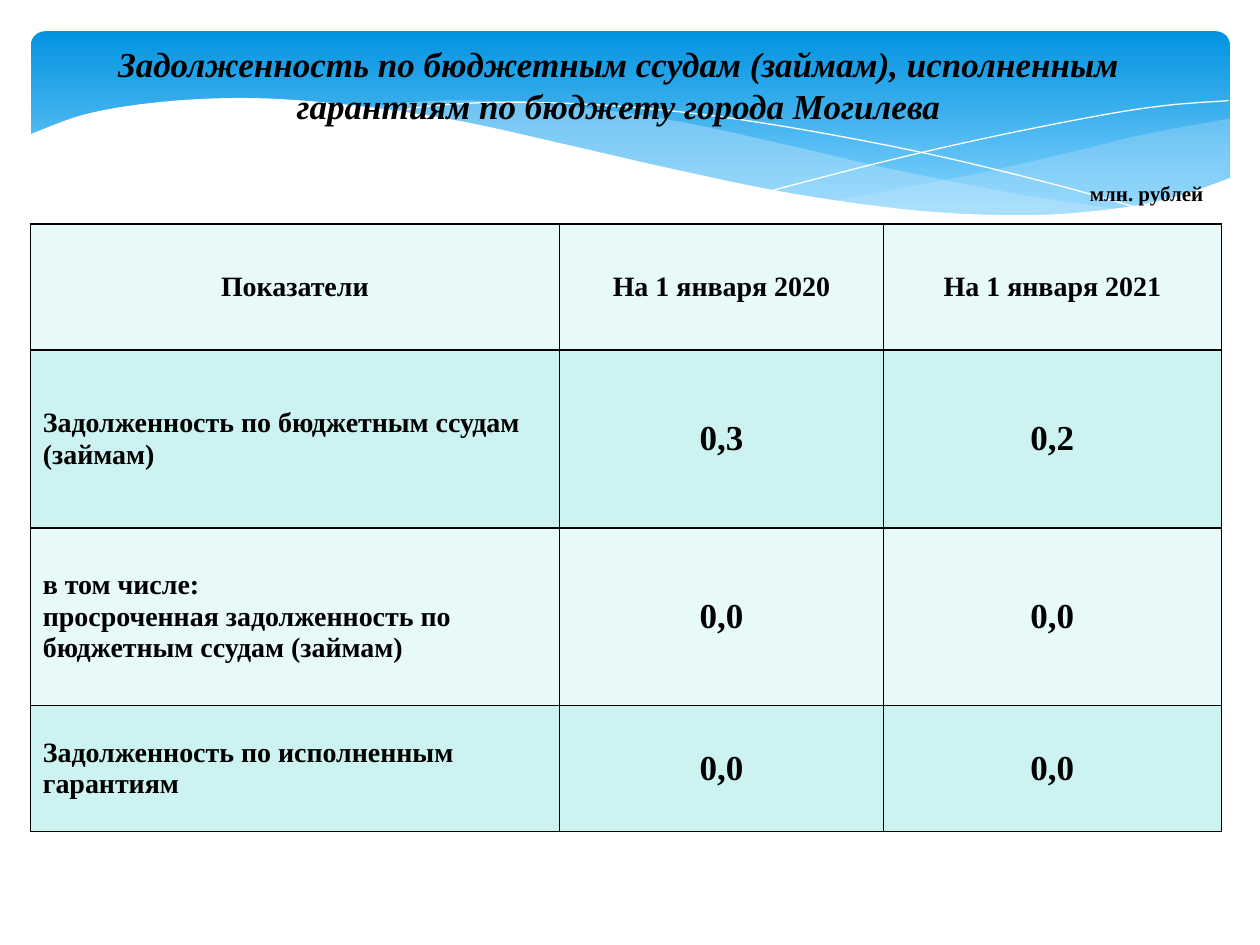
from dataclasses import dataclass
from typing import Optional

from lxml.etree import SubElement
from pptx import Presentation
from pptx.dml.color import RGBColor
from pptx.enum.shapes import MSO_SHAPE
from pptx.enum.text import MSO_ANCHOR, MSO_AUTO_SIZE, PP_ALIGN
from pptx.oxml.ns import qn
from pptx.util import Cm, Pt

BLACK = RGBColor(0x00, 0x00, 0x00)
WHITE = RGBColor(0xFF, 0xFF, 0xFF)
DEEP_BLUE = RGBColor(0x02, 0x93, 0xE0)
LIGHT_BLUE = RGBColor(0x83, 0xD3, 0xFE)
PALE_BLUE = RGBColor(0xC6, 0xE7, 0xFC)
PALE_MINT = RGBColor(0xE7, 0xF9, 0xF8)
MINT = RGBColor(0xCC, 0xF3, 0xF1)

FONT = {"name": "Times New Roman", "bold": True}
TITLE_FONT = FONT | {"size": Pt(20), "italic": True}
LABEL_FONT = FONT | {"size": Pt(16)}
VALUE_FONT = FONT | {"size": Pt(20)}
UNIT_FONT = FONT | {"size": Pt(12)}

Point = tuple[float, float]


@dataclass
class Wave:
    curves: list[list[Point]]
    fill: Optional[RGBColor] = None
    opacity: int = 100


@dataclass
class Caption:
    text: str
    left: float
    top: float
    width: float
    height: float
    font: dict
    align: PP_ALIGN
    wrap: bool


WAVES = [
    Wave([
        [(24.79, 2.39), (23.01, 2.72), (21.87, 3), (19.79, 3.48), (16.79, 4.06)],
        [(16.79, 4.06), (18.26, 4.24), (20.12, 4.37), (21.69, 4.32), (23.19, 4.11),
         (24.79, 3.58)],
    ], PALE_BLUE, 29),
    Wave([
        [(22.68, 4.24), (20.5, 3.91), (17.93, 3.4), (15.98, 2.95), (13.74, 2.46),
         (11.81, 2.18), (9.65, 2.03), (8.33, 2.06), (7.26, 2.18)],
        [(7.26, 2.18), (9.19, 2.46), (11.4, 2.95), (14.38, 3.63), (16.51, 4.01),
         (18.34, 4.27), (20.22, 4.39), (21.54, 4.37), (22.68, 4.24)],
    ], PALE_BLUE, 40),
    Wave([[(7.85, 2.29), (8.74, 2.13), (10.57, 2.06), (12.95, 2.18), (15.44, 2.49),
           (18.47, 3.05), (21.11, 3.68), (23.04, 4.22)]]),
    Wave([[(15.57, 3.84), (17.65, 3.3), (19.71, 2.82), (22, 2.36), (23.47, 2.13),
           (24.77, 2.03)]]),
    Wave([
        [(24.82, 3.58), (23.62, 3.99), (22.23, 4.24), (20.55, 4.34), (18.44, 4.24),
         (15.9, 3.89), (13.44, 3.38), (11.35, 2.9), (9.27, 2.44), (7.42, 2.16),
         (5.84, 2.01), (4.5, 1.98), (3.02, 2.08), (1.7, 2.31), (0.58, 2.72)],
        [(0.58, 5.69), (24.82, 5.69)],
    ], WHITE),
]

TITLE = Caption(
    "Задолженность по бюджетным ссудам (займам), исполненным гарантиям "
    "по бюджету города Могилева",
    1.37, 0.74, 22.2, 1.96, TITLE_FONT, PP_ALIGN.CENTER, True)
UNIT = Caption("млн. рублей", 21.69, 3.51, 2.82, 0.76, UNIT_FONT, PP_ALIGN.RIGHT, False)

COLUMN_WIDTHS = [10.67, 6.53, 6.81]
ROW_HEIGHTS = [2.54, 3.58, 3.58, 2.54]
ROWS = [
    ["Показатели", "На 1 января 2020", "На 1 января 2021"],
    ["Задолженность по бюджетным ссудам (займам)", "0,3", "0,2"],
    ["в том числе:\nпросроченная задолженность по бюджетным ссудам (займам)", "0,0", "0,0"],
    ["Задолженность по исполненным гарантиям", "0,0", "0,0"],
]


def smooth(points: list[Point], steps: int = 6) -> list[Point]:
    if len(points) < 3:
        return points
    padded = [points[0], *points, points[-1]]
    result = []
    for a, b, c, d in zip(padded, padded[1:], padded[2:], padded[3:]):
        for step in range(steps):
            t = step / steps
            result.append(tuple(
                q + t * ((r - p) + t * ((2 * p - 5 * q + 4 * r - s)
                                        + t * (3 * q - p - 3 * r + s))) / 2
                for p, q, r, s in zip(a, b, c, d)))
    return result + [points[-1]]


def write(frame, text: str, font: dict, align: PP_ALIGN) -> None:
    frame.text = text
    for para in frame.paragraphs:
        para.alignment = align
        for span in para.runs:
            for name, value in font.items():
                setattr(span.font, name, value)
            span.font.color.rgb = BLACK


def draw_banner(page) -> None:
    banner = page.shapes.add_shape(
        MSO_SHAPE.ROUNDED_RECTANGLE, Cm(0.63), Cm(0.63), Cm(24.16), Cm(3.96))
    banner.adjustments[0] = 0.07
    banner.shadow.inherit = False
    banner.line.fill.background()
    banner.fill.gradient()
    banner.fill.gradient_angle = 270
    stops = [(0, DEEP_BLUE), (0.9, LIGHT_BLUE)]
    for stop, (position, color) in zip(banner.fill.gradient_stops, stops):
        stop.position = position
        stop.color.rgb = color


def draw_wave(page, wave: Wave) -> None:
    points = [(Cm(x), Cm(y)) for curve in wave.curves for x, y in smooth(curve)]
    builder = page.shapes.build_freeform(*points[0])
    builder.add_line_segments(points[1:], close=wave.fill is not None)
    shape = builder.convert_to_shape()
    shape.shadow.inherit = False
    if wave.fill is None:
        shape.fill.background()
        shape.line.color.rgb = WHITE
        shape.line.width = Pt(0)
        return
    shape.line.fill.background()
    shape.fill.solid()
    shape.fill.fore_color.rgb = wave.fill
    if wave.opacity < 100:
        color = shape.fill._xPr.find(qn("a:solidFill"))[0]
        SubElement(color, qn("a:alpha"), val=str(wave.opacity * 1000))


def draw_caption(page, caption: Caption) -> None:
    box = page.shapes.add_textbox(
        Cm(caption.left), Cm(caption.top), Cm(caption.width), Cm(caption.height))
    box.text_frame.word_wrap = caption.wrap
    box.text_frame.auto_size = MSO_AUTO_SIZE.SHAPE_TO_FIT_TEXT
    write(box.text_frame, caption.text, caption.font, caption.align)


def add_borders(cell) -> None:
    properties = cell._tc.get_or_add_tcPr()
    for index, side in enumerate(("lnL", "lnR", "lnT", "lnB")):
        border = properties.makeelement(qn(f"a:{side}"), {"w": str(Pt(1))})
        fill = SubElement(border, qn("a:solidFill"))
        SubElement(fill, qn("a:srgbClr"), val=str(BLACK))
        properties.insert(index, border)


def draw_table(page) -> None:
    table = page.shapes.add_table(
        len(ROWS), len(COLUMN_WIDTHS), Cm(0.61), Cm(4.52),
        Cm(sum(COLUMN_WIDTHS)), Cm(sum(ROW_HEIGHTS))).table
    table.first_row = table.horz_banding = False
    for column, width in zip(table.columns, COLUMN_WIDTHS):
        column.width = Cm(width)
    for row_index, texts in enumerate(ROWS):
        table.rows[row_index].height = Cm(ROW_HEIGHTS[row_index])
        for column_index, text in enumerate(texts):
            cell = table.cell(row_index, column_index)
            is_header, is_label = row_index == 0, column_index == 0
            font = LABEL_FONT if is_header or is_label else VALUE_FONT
            align = PP_ALIGN.LEFT if is_label and not is_header else PP_ALIGN.CENTER
            write(cell.text_frame, text, font, align)
            cell.vertical_anchor = MSO_ANCHOR.MIDDLE
            cell.fill.solid()
            cell.fill.fore_color.rgb = MINT if row_index % 2 else PALE_MINT
            add_borders(cell)


def main() -> None:
    deck = Presentation()
    deck.slide_width, deck.slide_height = Cm(25.4), Cm(19.05)
    page = deck.slides.add_slide(deck.slide_layouts[6])
    draw_banner(page)
    for wave in WAVES:
        draw_wave(page, wave)
    draw_caption(page, TITLE)
    draw_table(page)
    draw_caption(page, UNIT)
    deck.save("out.pptx")


if __name__ == "__main__":
    main()
